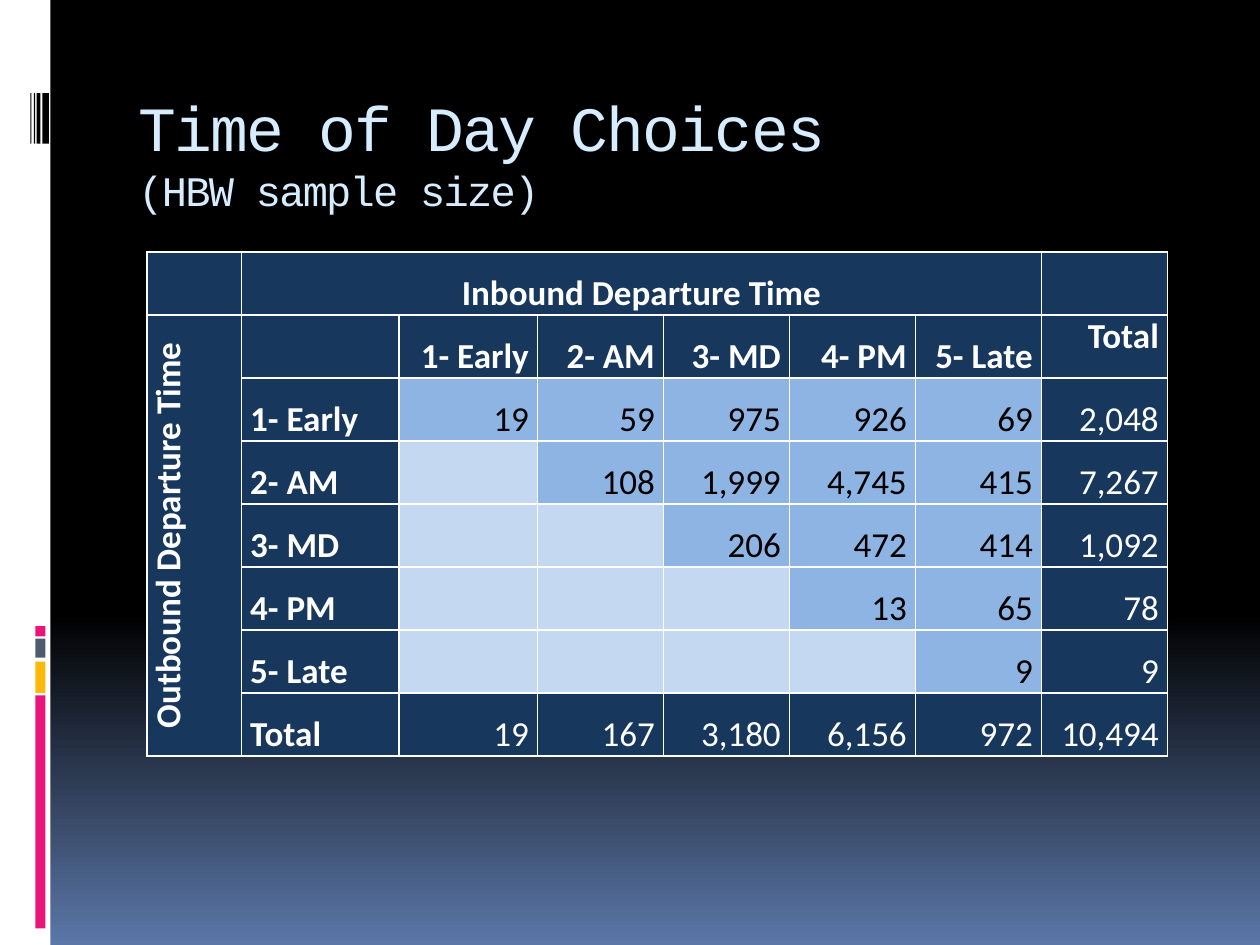
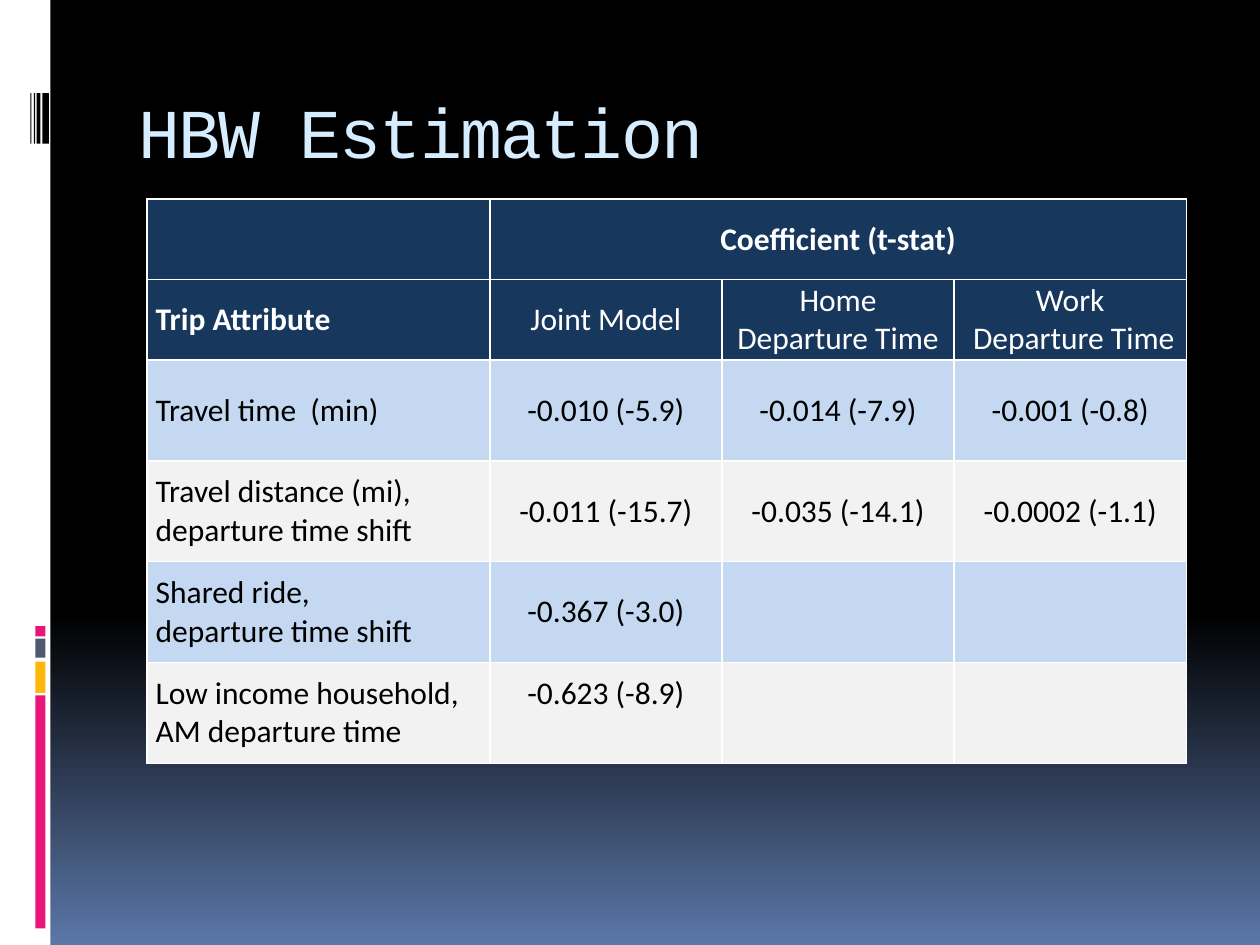
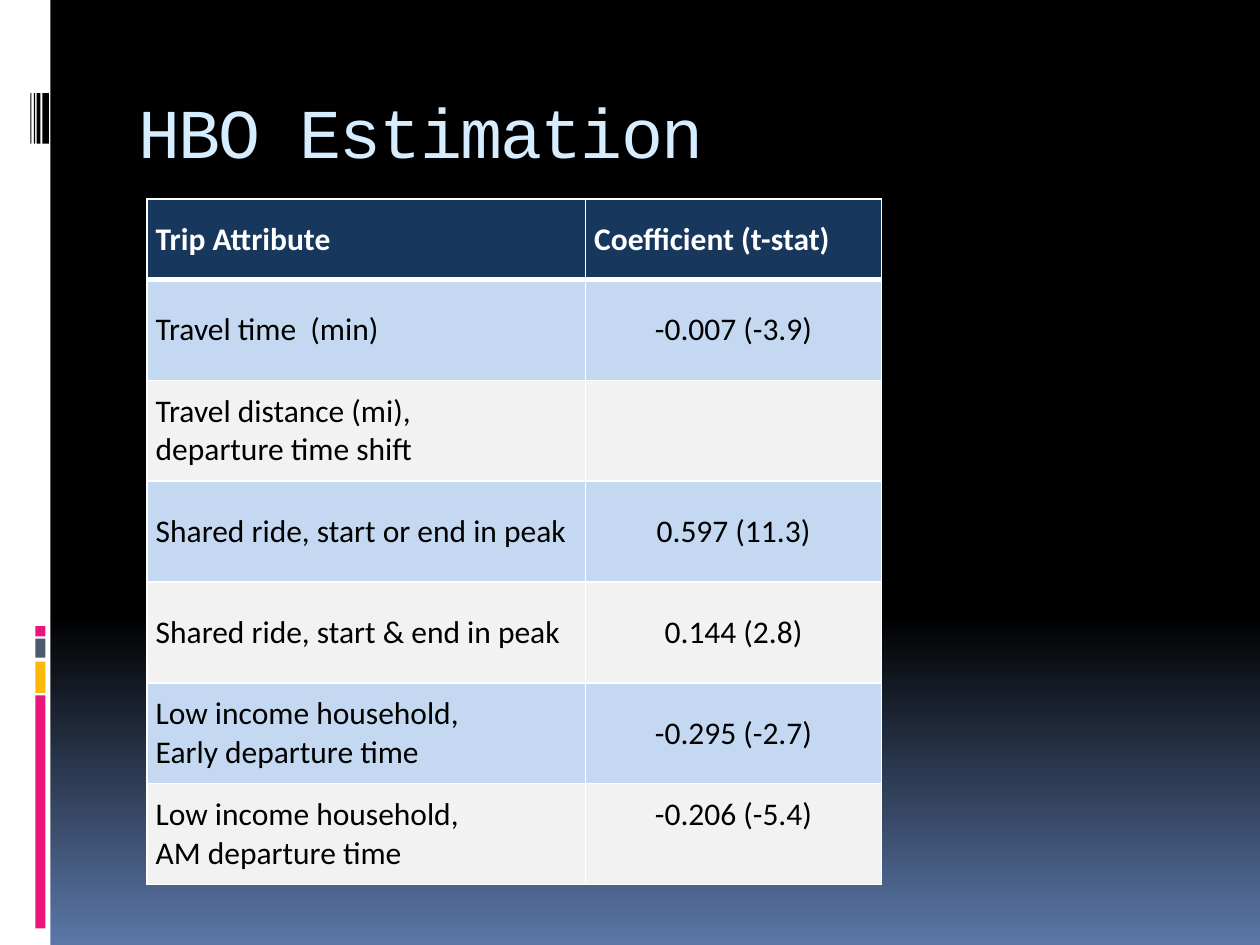
from dataclasses import dataclass
from functools import partial

from lxml import etree
from pptx import Presentation
from pptx.dml.color import RGBColor
from pptx.enum import shapes, text
from pptx.oxml import ns
from pptx.util import Pt


@dataclass(frozen=True)
class Theme:
    black: str = "000000"
    white: str = "FFFFFF"
    dusk: str = "5B77A8"
    pink: str = "EA157A"
    amber: str = "FEB80A"
    slate: str = "4E5B6F"
    title: str = "D6ECFF"
    navy: str = "17375D"
    blue: str = "8DB4E3"
    pale: str = "C4D9F1"
    grey: str = "F2F2F2"
    title_font: str = "Courier New"
    table_font: str = "Calibri"
    title_size: float = 40
    long_title_size: float = 36
    subtitle_size: float = 24
    matrix_size: float = 20
    table_size: float = 18


THEME = Theme()
LEFT, CENTER, RIGHT = text.PP_ALIGN.LEFT, text.PP_ALIGN.CENTER, text.PP_ALIGN.RIGHT
TOP, MIDDLE, BOTTOM = text.MSO_ANCHOR.TOP, text.MSO_ANCHOR.MIDDLE, text.MSO_ANCHOR.BOTTOM
TABLE_LEFT = 84
ESTIMATES_TOP = 113.8
HEADER_HEIGHT, ROW_HEIGHT = 46, 57.6
LINE_HEIGHT = 22


@dataclass
class Cell:
    wording: str = ""
    fill: str = THEME.navy
    color: str = THEME.white
    bold: bool = False
    align: text.PP_ALIGN = LEFT
    anchor: text.MSO_ANCHOR = MIDDLE
    span: tuple = (1, 1)
    upward: bool = False
    underline: float = 1
    bottom_inset: float = 0


Header = partial(Cell, bold=True)
Figure = partial(Cell, align=RIGHT, anchor=BOTTOM)


def rgb(color):
    return RGBColor.from_string(color)


def set_background(deck):
    """Black down to 65 % of the height, then fading to dusk blue."""
    fill = deck.slide_master.background.fill
    fill.gradient()
    fill.gradient_angle = 270
    for stop, position, color in zip(fill.gradient_stops, (0.65, 1), (THEME.black, THEME.dusk)):
        stop.position = position
        stop.color.rgb = rgb(color)


def add_bar(page, left, top, width, height, color):
    bar = page.shapes.add_shape(
        shapes.MSO_SHAPE.RECTANGLE, Pt(left), Pt(top), Pt(width), Pt(height))
    bar.shadow.inherit = False
    bar.fill.solid()
    bar.fill.fore_color.rgb = rgb(color)
    bar.line.fill.background()


def add_side_band(page):
    add_bar(page, 0, 0, 28.8, 540, THEME.white)
    for top, height, color in ((397.4, 133.2, THEME.pink), (378, 18, THEME.amber),
                               (365, 10.8, THEME.slate), (357.8, 5.8, THEME.pink)):
        add_bar(page, 20.2, top, 5.8, height, color)
    for left, width in ((24.2, 3.8), (20.9, 2.2), (19.4, 0.7), (17.3, 0.7)):
        add_bar(page, left, 53.3, width, 28.8, THEME.black)


def add_title(page, *lines):
    """Each line is a pair of wording and type size."""
    box = page.shapes.add_textbox(Pt(72), Pt(40.3), Pt(612), Pt(72))
    frame = box.text_frame
    frame.word_wrap = True
    frame.margin_top = Pt(10.5)
    para = frame.paragraphs[0]
    for number, (wording, size) in enumerate(lines):
        if number:
            para.add_line_break()
        span = para.add_run()
        span.text = wording
        span.font.name = THEME.title_font
        span.font.size = Pt(size)
        span.font.color.rgb = rgb(THEME.title)
        span.font._element.set("spc", "-100")


def add_page(deck, *title_lines):
    page = deck.slides.add_slide(deck.slide_layouts[6])
    add_side_band(page)
    add_title(page, *title_lines)
    return page


def set_borders(cell, underline):
    properties = cell._tc.get_or_add_tcPr()
    for side in "LRTB":
        width = underline if side == "B" else 1
        line = etree.SubElement(properties, ns.qn(f"a:ln{side}"), w=str(int(Pt(width))))
        fill = etree.SubElement(line, ns.qn("a:solidFill"))
        etree.SubElement(fill, ns.qn("a:srgbClr"), val=THEME.white)


def format_cell(cell, content, size):
    set_borders(cell, content.underline)
    cell.fill.solid()
    cell.fill.fore_color.rgb = rgb(content.fill)
    cell.margin_left = cell.margin_right = Pt(5)
    cell.margin_top, cell.margin_bottom = Pt(0), Pt(content.bottom_inset)
    cell.vertical_anchor = content.anchor
    if content.upward:
        cell._tc.get_or_add_tcPr().set("vert", "vert270")
    cell.text_frame.text = content.wording
    for para in cell.text_frame.paragraphs:
        para.alignment = content.align
        para.font.name = THEME.table_font
        para.font.size = Pt(size)
        para.font.bold = content.bold
        para.font.color.rgb = rgb(content.color)


def add_grid(page, top, widths, heights, rows, size):
    """Add a table; the contents that a merged cell covers are plain Cells."""
    frame = page.shapes.add_table(len(heights), len(widths), Pt(TABLE_LEFT), Pt(top),
                                  Pt(sum(widths)), Pt(sum(heights)))
    table = frame.table
    table.first_row = table.horz_banding = False
    for column, width in zip(table.columns, widths):
        column.width = Pt(width)
    for row, height in zip(table.rows, heights):
        row.height = Pt(height)
    for r, contents in enumerate(rows):
        for c, content in enumerate(contents):
            cell = table.cell(r, c)
            format_cell(cell, content, size)
            if content.span != (1, 1):
                down, across = content.span
                cell.merge(table.cell(r + down - 1, c + across - 1))


def time_of_day_rows(periods, counts):
    """Lay out the upper triangle of counts with its row and column totals."""
    size = len(periods)
    rows = [
        [Cell(), Header("Inbound Departure Time", align=CENTER, anchor=BOTTOM, span=(1, size + 1)),
         *[Cell() for _ in range(size + 1)]],
        [Header("Outbound Departure Time", align=CENTER, span=(size + 2, 1), upward=True), Cell(),
         *[Figure(period, bold=True) for period in periods],
         Header("Total", align=RIGHT, anchor=TOP)],
    ]
    for number, (period, values) in enumerate(zip(periods, counts)):
        rows.append([
            Cell(), Header(period, anchor=BOTTOM),
            *[Cell(fill=THEME.pale) for _ in range(number)],
            *[Figure(f"{value:,}", fill=THEME.blue, color=THEME.black) for value in values],
            Figure(f"{sum(values):,}")])
    totals = [sum(counts[r][c - r] for r in range(c + 1)) for c in range(size)]
    rows.append([Cell(), Header("Total", anchor=BOTTOM),
                 *[Figure(f"{total:,}") for total in totals + [sum(totals)]]])
    return rows


def estimate_rows(estimates):
    """Band the rows; the last row's figures sit level with its first line."""
    rows = []
    for number, (attribute, *figures) in enumerate(estimates):
        style = {"fill": THEME.grey if number % 2 else THEME.pale, "color": THEME.black}
        inset = LINE_HEIGHT if number == len(estimates) - 1 else 0
        rows.append([Cell(attribute, **style),
                     *[Cell(figure, align=CENTER, bottom_inset=inset, **style)
                       for figure in figures]])
    return rows


def add_time_of_day(deck):
    page = add_page(deck, ("Time of Day Choices", THEME.long_title_size),
                    ("(HBW sample size)", THEME.subtitle_size))
    periods = ["1- Early", "2- AM", "3- MD", "4- PM", "5- Late"]
    counts = [[19, 59, 975, 926, 69], [108, 1999, 4745, 415], [206, 472, 414], [13, 65], [9]]
    add_grid(page, 144, [54, 90, 79.2] + [72] * 5, [36] * 8,
             time_of_day_rows(periods, counts), THEME.matrix_size)


def add_hbw_estimation(deck):
    page = add_page(deck, ("HBW Estimation", THEME.title_size))
    models = ["Joint Model", "Home Departure Time", "Work\n Departure Time"]
    headers = [
        [Cell(), Header("Coefficient (t-stat)", align=CENTER, span=(1, 3)), Cell(), Cell()],
        [Header("Trip Attribute"), *[Cell(model, align=CENTER) for model in models]],
    ]
    estimates = [
        ("Travel time  (min)", "-0.010 (-5.9)", "-0.014 (-7.9)", "-0.001 (-0.8)"),
        ("Travel distance (mi),\ndeparture time shift",
         "-0.011 (-15.7)", "-0.035 (-14.1)", "-0.0002 (-1.1)"),
        ("Shared ride,\ndeparture time shift", "-0.367 (-3.0)", "", ""),
        ("Low income household,\nAM departure time", "-0.623 (-8.9)", "", ""),
    ]
    add_grid(page, ESTIMATES_TOP, [195.9] + [132.7] * 3,
             [HEADER_HEIGHT] * 2 + [ROW_HEIGHT] * len(estimates),
             headers + estimate_rows(estimates), THEME.table_size)


def add_hbo_estimation(deck):
    page = add_page(deck, ("HBO Estimation", THEME.title_size))
    headers = [Header(name, underline=3) for name in ("Trip Attribute", "Coefficient (t-stat)")]
    estimates = [
        ("Travel time  (min)", "-0.007 (-3.9)"),
        ("Travel distance (mi),\ndeparture time shift", ""),
        ("Shared ride, start or end in peak", "0.597 (11.3)"),
        ("Shared ride, start & end in peak", "0.144 (2.8)"),
        ("Low income household,\nEarly departure time", "-0.295 (-2.7)"),
        ("Low income household,\nAM departure time", "-0.206 (-5.4)"),
    ]
    add_grid(page, ESTIMATES_TOP, [250.6, 169.2],
             [HEADER_HEIGHT] + [ROW_HEIGHT] * len(estimates),
             [headers] + estimate_rows(estimates), THEME.table_size)


def main():
    deck = Presentation()
    deck.slide_width, deck.slide_height = Pt(720), Pt(540)
    set_background(deck)
    add_time_of_day(deck)
    add_hbw_estimation(deck)
    add_hbo_estimation(deck)
    deck.save("out.pptx")


if __name__ == "__main__":
    main()
